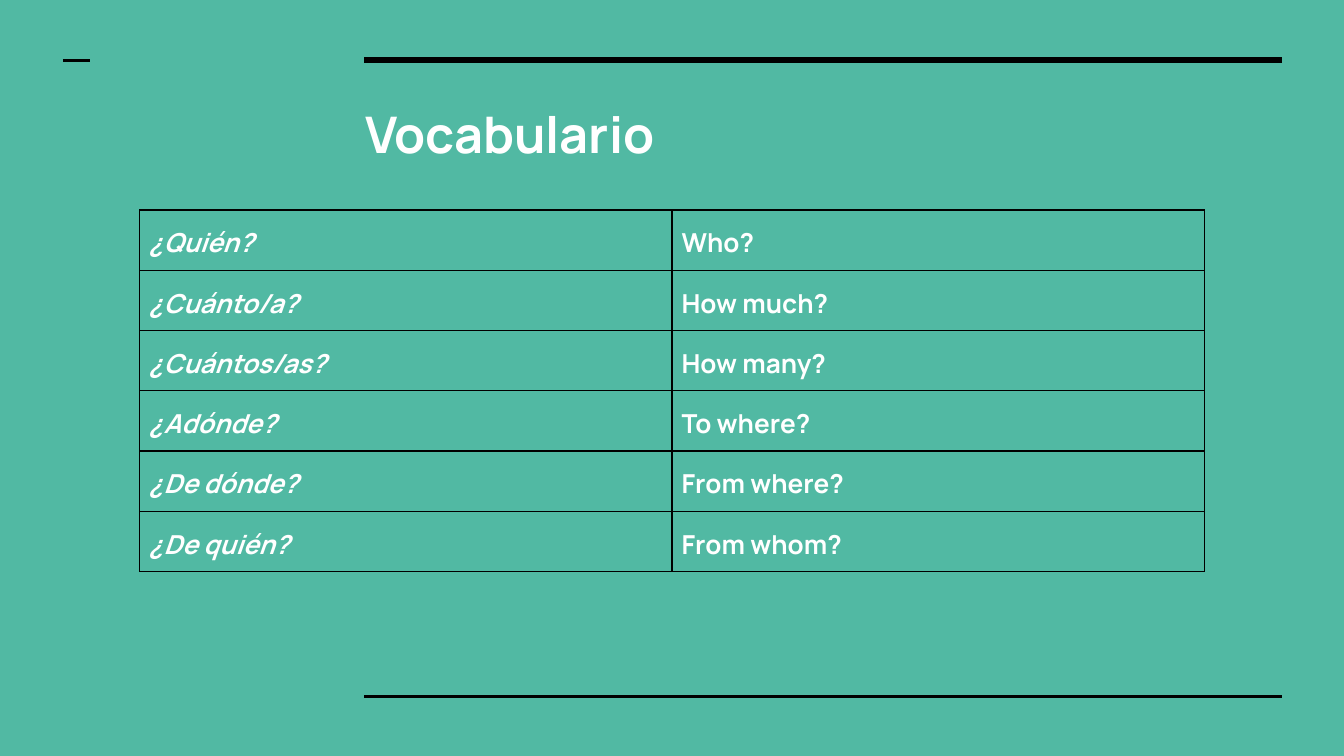
from typing import NamedTuple

import pptx
import pptx.dml.color
import pptx.enum.shapes
import pptx.enum.text
import pptx.oxml
import pptx.oxml.ns
import pptx.util
from pptx.util import Cm, Pt

FONT = "Manrope"
BACKGROUND = "51B9A3"
BLACK = "000000"
WHITE = "FFFFFF"


class Rule(NamedTuple):
    left: float
    right: float
    y: float
    weight: float


class Entry(NamedTuple):
    spanish: str
    english: str


RULES = [
    Rule(6.88, 24.23, 1.14, 3),
    Rule(6.88, 24.23, 13.16, 1.5),
    Rule(1.19, 1.7, 1.14, 1.5),
]
VOCABULARY = [
    Entry("¿Quién?", "Who?"),
    Entry("¿Cuánto/a?", "How much?"),
    Entry("¿Cuántos/as?", "How many?"),
    Entry("¿Adónde?", "To where?"),
    Entry("¿De dónde?", "From where?"),
    Entry("¿De quién?", "From whom?"),
]


def color(value: str) -> pptx.dml.color.RGBColor:
    return pptx.dml.color.RGBColor.from_string(value)


def format_text(paragraph, size: float, italic: bool = False) -> None:
    paragraph.alignment = pptx.enum.text.PP_ALIGN.LEFT
    font = paragraph.font
    font.name = FONT
    font.size = Pt(size)
    font.bold = True
    font.italic = italic
    font.color.rgb = color(WHITE)


def draw_rule(slide, rule: Rule) -> None:
    connector = slide.shapes.add_connector(
        pptx.enum.shapes.MSO_CONNECTOR.STRAIGHT,
        Cm(rule.left), Cm(rule.y), Cm(rule.right), Cm(rule.y),
    )
    connector.line.color.rgb = color(BLACK)
    connector.line.width = Pt(rule.weight)
    properties = connector._element.spPr
    properties.append(pptx.oxml.parse_xml(f"<a:effectLst {pptx.oxml.ns.nsdecls('a')}/>"))


def add_borders(cell) -> None:
    properties = cell._tc.get_or_add_tcPr()
    for side in ("lnL", "lnR", "lnT", "lnB"):
        properties.append(pptx.oxml.parse_xml(
            f'<a:{side} {pptx.oxml.ns.nsdecls("a")} w="{Pt(0.75)}">'
            f'<a:solidFill><a:srgbClr val="{BLACK}"/></a:solidFill></a:{side}>'
        ))


def fill_cell(cell, text: str, italic: bool) -> None:
    add_borders(cell)
    cell.fill.background()
    cell.margin_left = cell.margin_right = Cm(0.18)
    cell.margin_top = cell.margin_bottom = Cm(0.18)
    cell.text = text
    paragraph = cell.text_frame.paragraphs[0]
    paragraph.line_spacing = 1.15
    format_text(paragraph, 14, italic)


def draw_vocabulary(slide, entries: list[Entry]) -> None:
    column_width, row_height = Cm(10.06), Cm(1.06)
    table = slide.shapes.add_table(
        len(entries), 2, Cm(2.64), Cm(3.97), 2 * column_width, len(entries) * row_height
    ).table
    table.first_row = False
    table.horz_banding = False
    for row, entry in enumerate(entries):
        fill_cell(table.cell(row, 0), entry.spanish, italic=True)
        fill_cell(table.cell(row, 1), entry.english, italic=False)


def draw_title(slide, text: str) -> None:
    title = slide.shapes.title
    title.left, title.top = Cm(6.65), Cm(1.6)
    title.width, title.height = Cm(17.55), Cm(1.75)
    frame = title.text_frame
    frame.text = text
    frame.word_wrap = True
    frame.auto_size = pptx.enum.text.MSO_AUTO_SIZE.NONE
    frame.vertical_anchor = pptx.enum.text.MSO_ANCHOR.BOTTOM
    frame.margin_left = frame.margin_right = Cm(0.25)
    frame.margin_top = frame.margin_bottom = Cm(0.25)
    paragraph = frame.paragraphs[0]
    paragraph.space_before = Pt(0)
    format_text(paragraph, 27)


def main() -> None:
    presentation = pptx.Presentation()
    presentation.slide_width = Cm(25.4)
    presentation.slide_height = Cm(14.29)
    slide = presentation.slides.add_slide(presentation.slide_layouts[5])
    slide.background.fill.solid()
    slide.background.fill.fore_color.rgb = color(BACKGROUND)
    for rule in RULES:
        draw_rule(slide, rule)
    draw_title(slide, "Vocabulario")
    draw_vocabulary(slide, VOCABULARY)
    presentation.save("out.pptx")


if __name__ == "__main__":
    main()
